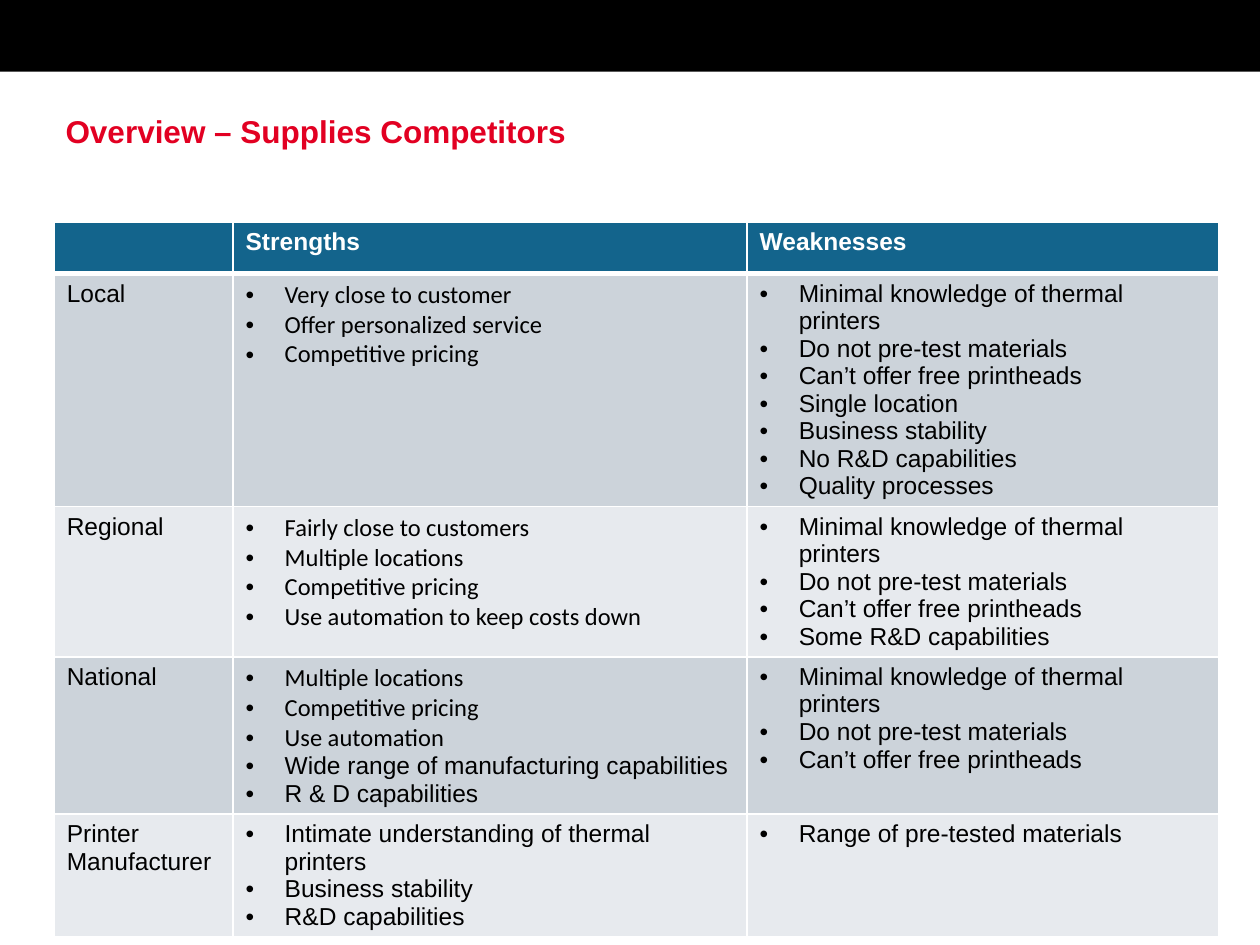
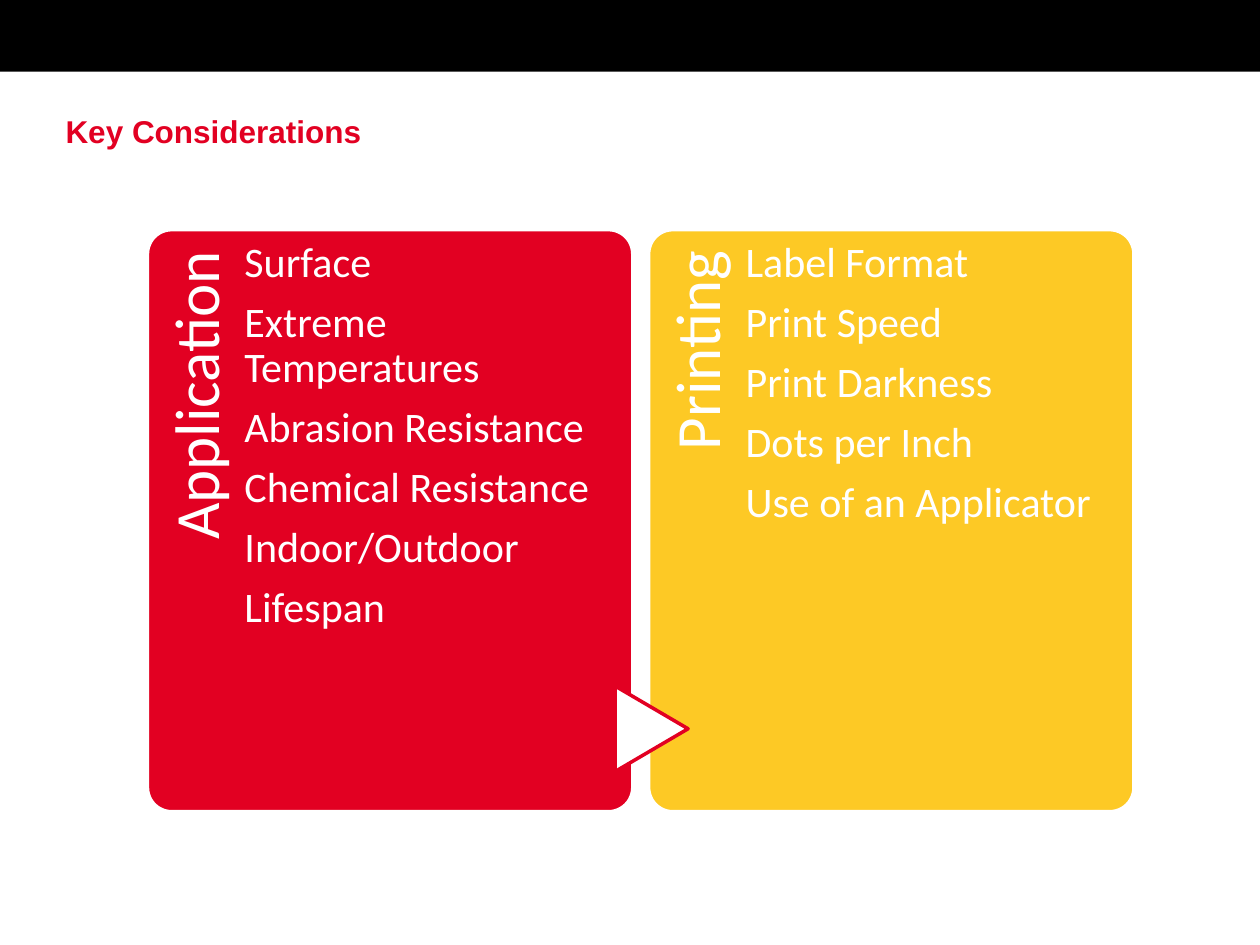
from dataclasses import dataclass

import pptx
import pptx.dml.color
import pptx.enum.shapes
import pptx.enum.text
import pptx.oxml.ns
import pptx.util
from lxml import etree

Inches, Pt = pptx.util.Inches, pptx.util.Pt
SHAPE = pptx.enum.shapes.MSO_SHAPE
ALIGN = pptx.enum.text.PP_ALIGN
ANCHOR = pptx.enum.text.MSO_ANCHOR


@dataclass(frozen=True)
class Theme:
    red: str = "E20022"
    yellow: str = "FDC925"
    black: str = "000000"
    white: str = "FFFFFF"
    header: str = "13648C"
    stripes: tuple = ("CCD3DA", "E7EAEE")
    sans: str = "Arial"
    human: str = "Calibri"
    title_size: float = 18
    table_size: float = 14
    label_size: float = 36
    list_size: float = 24
    outline: float = 2


@dataclass(frozen=True)
class Box:
    """A region in inches; share() cuts out a share of it."""
    left: float
    top: float
    width: float
    height: float

    def share(self, x, y, width, height):
        return Box(self.left + x * self.width, self.top + y * self.height,
                   width * self.width, height * self.height)

    def turned(self):
        """The box to give a shape that is then rotated by a quarter turn."""
        shift = (self.width - self.height) / 2
        return Box(self.left + shift, self.top - shift, self.height, self.width)

    def emu(self):
        return [Inches(n) for n in (self.left, self.top, self.width, self.height)]


THEME = Theme()
PAGE = Box(0, 0, 10, 7.5)
BAND = PAGE.share(0, 0, 1, 0.076)
TITLE = PAGE.share(0.042, 0.112, 0.916, 0.095)
TABLE = PAGE.share(0.043, 0.235, 0.924, 0.273)
CARDS = PAGE.share(0.117, 0.243, 0.783, 0.616)

COLUMN_WEIGHTS = (1.42, 4.08, 3.74)
HEADINGS = ("", "Strengths", "Weaknesses")
COMMON_WEAKNESSES = ("Minimal knowledge of thermal printers",
                     "Do not pre-test materials",
                     "Can’t offer free printheads")
# Competitor, strengths in Calibri, strengths in Arial, weaknesses
COMPETITORS = (
    ("Local",
     ("Very close to customer", "Offer personalized service",
      "Competitive pricing"), (),
     COMMON_WEAKNESSES + ("Single location", "Business stability",
                          "No R&D capabilities", "Quality processes")),
    ("Regional",
     ("Fairly close to customers", "Multiple locations", "Competitive pricing",
      "Use automation to keep costs down"), (),
     COMMON_WEAKNESSES + ("Some R&D capabilities",)),
    ("National",
     ("Multiple locations", "Competitive pricing", "Use automation"),
     ("Wide range of manufacturing capabilities", "R & D capabilities"),
     COMMON_WEAKNESSES),
    ("Printer Manufacturer", (),
     ("Intimate understanding of thermal printers", "Business stability",
      "R&D capabilities"),
     ("Range of pre-tested materials",)),
)
CONSIDERATIONS = (
    ("Application", THEME.red,
     ("Surface", "Extreme Temperatures", "Abrasion Resistance",
      "Chemical Resistance", "Indoor/Outdoor", "Lifespan")),
    ("Printing", THEME.yellow,
     ("Label Format", "Print Speed", "Print Darkness", "Dots per Inch",
      "Use of an Applicator")),
)


# Shared helpers
def rgb(color):
    return pptx.dml.color.RGBColor.from_string(color)


def add_run(paragraph, text, font, size, color, bold=False):
    run = paragraph.add_run()
    run.text = text
    run.font.name, run.font.size, run.font.bold = font, Pt(size), bold
    run.font.color.rgb = rgb(color)


def next_paragraph(frame, index):
    return frame.add_paragraph() if index else frame.paragraphs[0]


def add_shape(slide, preset, box, fill, outline=None):
    shape = slide.shapes.add_shape(preset, *box.emu())
    shape.shadow.inherit = False
    shape.fill.solid()
    shape.fill.fore_color.rgb = rgb(fill)
    if outline:
        shape.line.color.rgb = rgb(outline)
        shape.line.width = Pt(THEME.outline)
    else:
        shape.line.fill.background()
    return shape


def add_lines(slide, box, lines, size, insets, align=ALIGN.LEFT):
    holder = slide.shapes.add_textbox(*box.emu())
    frame = holder.text_frame
    frame.word_wrap = True
    (frame.margin_left, frame.margin_top,
     frame.margin_right, frame.margin_bottom) = map(Inches, insets)
    for index, line in enumerate(lines):
        paragraph = next_paragraph(frame, index)
        paragraph.alignment = align
        paragraph.line_spacing = 0.9
        paragraph.space_after = Pt(0.35 * size)
        add_run(paragraph, line, THEME.human, size, THEME.white)
    return holder


# Band on the layout, title on each slide
def add_band(slide):
    band = add_shape(slide, SHAPE.RECTANGLE, BAND, THEME.black)
    slide.slide_layout.shapes.element.insert(2, band.element)


def new_slide(deck, heading):
    slide = deck.slides.add_slide(deck.slide_layouts[5])
    title = slide.shapes.title
    title.left, title.top, title.width, title.height = TITLE.emu()
    title.text_frame.vertical_anchor = ANCHOR.TOP
    paragraph = title.text_frame.paragraphs[0]
    paragraph.alignment = ALIGN.LEFT
    add_run(paragraph, heading, THEME.sans, THEME.title_size, THEME.red, True)
    return slide


# Competitor table
def style_cell(cell, fill, top=1, bottom=1):
    properties = cell._tc.get_or_add_tcPr()
    qn = pptx.oxml.ns.qn
    for side, width in (("L", 1), ("R", 1), ("T", top), ("B", bottom)):
        border = etree.SubElement(properties, qn(f"a:ln{side}"), w=str(Pt(width)))
        solid = etree.SubElement(border, qn("a:solidFill"))
        etree.SubElement(solid, qn("a:srgbClr"), val=THEME.white)
    cell.fill.solid()
    cell.fill.fore_color.rgb = rgb(fill)


def add_bullets(cell, points):
    for index, (text, font) in enumerate(points):
        paragraph = next_paragraph(cell.text_frame, index)
        properties = paragraph._p.get_or_add_pPr()
        properties.set("marL", str(Inches(0.31)))
        properties.set("indent", str(Inches(-0.31)))
        qn = pptx.oxml.ns.qn
        etree.SubElement(properties, qn("a:buFont"), typeface=THEME.sans)
        etree.SubElement(properties, qn("a:buChar"), char="•")
        add_run(paragraph, text, font, THEME.table_size, THEME.black)


def add_competitor_table(slide, box):
    table = slide.shapes.add_table(len(COMPETITORS) + 1, len(HEADINGS),
                                   *box.emu()).table
    table.horz_banding = False
    for column, weight in zip(table.columns, COLUMN_WEIGHTS):
        column.width = Inches(box.width * weight / sum(COLUMN_WEIGHTS))

    for column, heading in enumerate(HEADINGS):
        cell = table.cell(0, column)
        style_cell(cell, THEME.header, bottom=3)
        if heading:
            add_run(cell.text_frame.paragraphs[0], heading, THEME.sans,
                    THEME.table_size, THEME.white, True)

    for row, (name, human, sans, weaknesses) in enumerate(COMPETITORS, 1):
        for column in range(len(HEADINGS)):
            style_cell(table.cell(row, column), THEME.stripes[(row - 1) % 2],
                       top=3 if row == 1 else 1)
        add_run(table.cell(row, 0).text_frame.paragraphs[0], name, THEME.sans,
                THEME.table_size, THEME.black)
        add_bullets(table.cell(row, 1), [(text, THEME.human) for text in human]
                    + [(text, THEME.sans) for text in sans])
        add_bullets(table.cell(row, 2),
                    [(text, THEME.sans) for text in weaknesses])


# Consideration cards
def add_card(slide, box, label, color, points):
    card = add_shape(slide, SHAPE.ROUNDED_RECTANGLE, box, color, THEME.white)
    card.adjustments[0] = 0.05
    strip = box.share(0, 0, 0.2, 0.82)
    side_label = add_lines(slide, strip.turned(), [label], THEME.label_size,
                           (0, 0.14, 0.17, 0), ALIGN.RIGHT)
    side_label.rotation = 270
    add_lines(slide, box.share(0.2, 0, 0.745, 1), points, THEME.list_size,
              (0, 0.09, 0, 0))


def add_consideration_cards(slide, box):
    card_share = 0.492
    step = (1 - card_share) / (len(CONSIDERATIONS) - 1)
    for index, (label, color, points) in enumerate(CONSIDERATIONS):
        add_card(slide, box.share(index * step, 0, card_share, 1),
                 label, color, points)
    # Arrow from the first card to the second
    pointer = box.share(0.474, 0.784, 0.074, 0.147)
    arrow = add_shape(slide, SHAPE.FLOWCHART_EXTRACT, pointer.turned(),
                      THEME.white, THEME.red)
    arrow.rotation = 90


def main():
    deck = pptx.Presentation()
    deck.slide_width, deck.slide_height = Inches(PAGE.width), Inches(PAGE.height)

    competitors = new_slide(deck, "Overview – Supplies Competitors")
    add_band(competitors)
    add_competitor_table(competitors, TABLE)

    considerations = new_slide(deck, "Key Considerations")
    add_consideration_cards(considerations, CARDS)

    deck.save("out.pptx")


if __name__ == "__main__":
    main()
